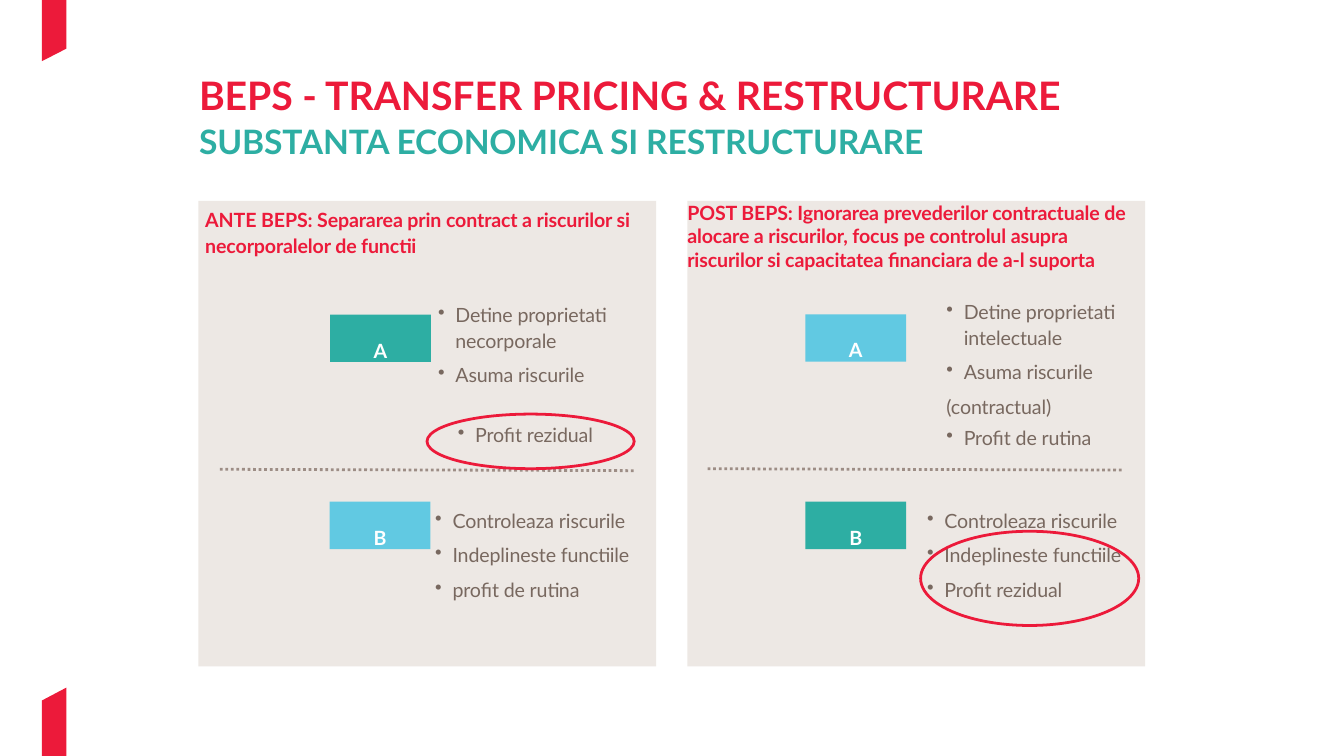
from dataclasses import dataclass

from lxml.etree import SubElement
from pptx import Presentation
from pptx.dml.color import RGBColor
from pptx.enum.dml import MSO_LINE_DASH_STYLE as Dash
from pptx.enum.shapes import MSO_CONNECTOR as Connector, MSO_SHAPE as Shape
from pptx.enum.text import MSO_ANCHOR as Anchor, PP_ALIGN as Align
from pptx.oxml.ns import qn
from pptx.util import Pt


@dataclass(frozen=True)
class Theme:
    font: str = "Lato"
    red: str = "EC1A3A"
    teal: str = "2DAEA3"
    sky: str = "61C9E2"
    sand: str = "EDE8E4"
    brown: str = "78685F"
    rule: str = "9D8D85"
    white: str = "FFFFFF"
    title: int = 28
    subtitle: int = 24
    body: int = 14
    stroke: float = 1.98
    indent: float = 12.4


THEME = Theme()


def rgb(colour):
    return RGBColor.from_string(colour)


def prepare(frame, anchor=Anchor.TOP):
    frame.word_wrap = True
    frame.vertical_anchor = anchor
    frame.margin_left = frame.margin_right = Pt(0)
    frame.margin_top = frame.margin_bottom = Pt(0)


def write(paragraph, text, colour, size=THEME.body, bold=False,
          align=Align.LEFT, spacing=None, before=None, tracking=-10):
    run = paragraph.add_run()
    run.text = text
    run._r.get_or_add_rPr().set("spc", str(tracking))
    paragraph.alignment = align
    paragraph.line_spacing = spacing
    if before:
        paragraph.space_before = Pt(before)
    font = paragraph.font
    font.name, font.size, font.bold = THEME.font, Pt(size), bold
    font.color.rgb = rgb(colour)


def add_bullet(paragraph):
    properties = paragraph._p.get_or_add_pPr()
    properties.set("marL", str(Pt(THEME.indent)))
    properties.set("indent", str(-Pt(THEME.indent)))
    SubElement(properties, qn("a:buChar"), char="•")


def add_text_frame(slide, left, top, width, height):
    box = slide.shapes.add_textbox(Pt(left), Pt(top), Pt(width), Pt(height))
    prepare(box.text_frame)
    return box.text_frame


def add_points(slide, left, top, width, height, points):
    frame = add_text_frame(slide, left, top, width, height)
    for index, (text, bulleted, spacing, before) in enumerate(points):
        paragraph = frame.add_paragraph() if index else frame.paragraphs[0]
        if bulleted:
            add_bullet(paragraph)
        write(paragraph, text, THEME.brown, spacing=spacing, before=before)


def add_block(slide, left, top, width, height, colour, anchor=Anchor.TOP):
    block = slide.shapes.add_shape(Shape.RECTANGLE, Pt(left), Pt(top), Pt(width), Pt(height))
    block.shadow.inherit = False
    block.fill.solid()
    block.fill.fore_color.rgb = rgb(colour)
    block.line.fill.background()
    prepare(block.text_frame, anchor)
    return block.text_frame.paragraphs[0]


def add_company(slide, left, top, letter, colour):
    label = add_block(slide, left, top, 72, 33.8, colour, Anchor.BOTTOM)
    write(label, letter, THEME.white, bold=True, align=Align.CENTER)


def add_highlight(slide, left, top, width, height):
    ring = slide.shapes.add_shape(Shape.OVAL, Pt(left), Pt(top), Pt(width), Pt(height))
    ring.shadow.inherit = False
    ring.fill.background()
    ring.line.color.rgb = rgb(THEME.red)
    ring.line.width = Pt(THEME.stroke)


def add_divider(slide, left, top):
    divider = slide.shapes.add_connector(
        Connector.STRAIGHT, Pt(left), Pt(top), Pt(left + 296), Pt(top + 1))
    divider.line.color.rgb = rgb(THEME.rule)
    divider.line.width = Pt(THEME.stroke)
    divider.line.dash_style = Dash.ROUND_DOT
    SubElement(divider._element.spPr, qn("a:effectLst"))


def add_ribbon(slide, corners):
    start, *rest = [(Pt(x), Pt(y)) for x, y in corners]
    outline = slide.shapes.build_freeform(*start, scale=1.0)
    outline.add_line_segments(rest, close=True)
    ribbon = outline.convert_to_shape()
    ribbon.shadow.inherit = False
    ribbon.fill.solid()
    ribbon.fill.fore_color.rgb = rgb(THEME.red)
    ribbon.line.fill.background()


def add_title(slide):
    frame = add_text_frame(slide, 142.2, 51.1, 742, 65)
    write(frame.paragraphs[0], "BEPS - TRANSFER PRICING & RESTRUCTURARE",
          THEME.red, THEME.title, True, tracking=-4)
    write(frame.add_paragraph(), "SUBSTANTA ECONOMICA SI RESTRUCTURARE",
          THEME.teal, THEME.subtitle, True, before=1.9)


def add_ante(slide):
    add_block(slide, 141.8, 143.5, 327, 332.5, THEME.sand)
    heading = add_text_frame(slide, 146.6, 146.9, 317.5, 37.5)
    write(heading.paragraphs[0],
          "ANTE BEPS: Separarea prin contract a riscurilor si necorporalelor de functii",
          THEME.red, bold=True, spacing=1.1)
    add_points(slide, 312.9, 214.6, 140.4, 62.6, [
        ("Detine proprietati necorporale", True, 1.1, None),
        ("Asuma riscurile", True, None, 7.7)])
    add_points(slide, 327, 302, 111, 17.3, [("Profit rezidual", True, None, None)])
    add_points(slide, 310.9, 363.6, 148.3, 67, [
        ("Controleaza riscurile", True, None, None),
        ("Indeplineste functiile", True, None, 7.7),
        ("profit de rutina", True, 1.1, 6)])
    add_divider(slide, 157, 335.2)
    add_company(slide, 235.8, 224.8, "A", THEME.teal)
    add_company(slide, 235.5, 358.4, "B", THEME.sky)


def add_post(slide):
    heading = add_block(slide, 491, 143.5, 327, 332.5, THEME.sand)
    write(heading,
          "POST BEPS: Ignorarea prevederilor contractuale de alocare a riscurilor, "
          "focus pe controlul asupra riscurilor si capacitatea financiara de a-l suporta",
          THEME.red, bold=True)
    add_points(slide, 662.3, 363.6, 151.2, 67, [
        ("Controleaza riscurile", True, None, None),
        ("Indeplineste functiile", True, None, 7.7),
        ("Profit rezidual", True, None, 7.7)])
    add_divider(slide, 505.5, 334.8)
    add_company(slide, 575.3, 224.5, "A", THEME.sky)
    add_company(slide, 575.3, 358.4, "B", THEME.teal)
    add_points(slide, 676.1, 212.7, 136.8, 126, [
        ("Detine proprietati intelectuale", True, 1.1, None),
        ("Asuma riscurile", True, None, 7.7),
        ("(contractual)", False, None, 7.7),
        ("Profit de rutina", True, Pt(14.8), 7.7)])


def main():
    deck = Presentation()
    deck.slide_width, deck.slide_height = Pt(960), Pt(540)
    slide = deck.slides.add_slide(deck.slide_layouts[6])
    add_ribbon(slide, [(47.4, 0), (30, 0), (30, 43.7), (47.4, 34.8)])
    add_ribbon(slide, [(47.4, 491.2), (30, 500.4), (30, 540), (47.4, 540)])
    add_title(slide)
    add_ante(slide)
    add_post(slide)
    add_highlight(slide, 305, 295.8, 148, 39)
    add_highlight(slide, 657.6, 379.5, 155.8, 67.3)
    deck.save("out.pptx")


if __name__ == "__main__":
    main()
